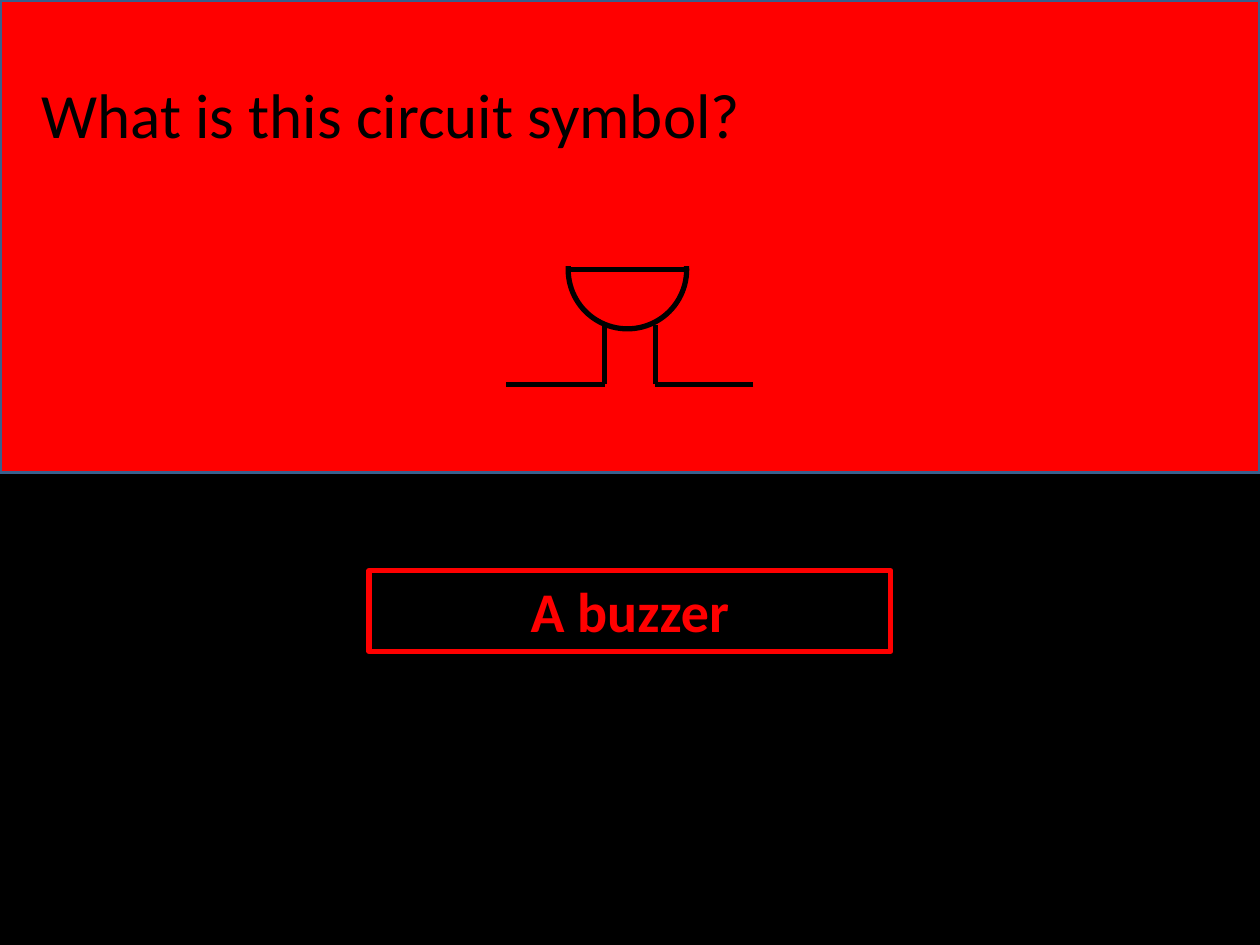
from lxml.etree import SubElement
from pptx import Presentation
from pptx.dml.color import RGBColor
from pptx.enum.shapes import MSO_CONNECTOR, MSO_SHAPE
from pptx.enum.text import MSO_ANCHOR, MSO_AUTO_SIZE, PP_ALIGN
from pptx.oxml.ns import qn
from pptx.util import Inches, Pt

COLS, ROWS = 100, 75
CELL = Inches(10) // COLS
HUES = {"black": "000000", "red": "FF0000", "edge": "3A5F8C"}


def grid(*cells):
    return [round(n * CELL) for n in cells]


def hue(name):
    return RGBColor.from_string(HUES[name])


def block(shapes, kind, box, fill=None, edge=None, width=3):
    shape = shapes.add_shape(kind, *grid(*box))
    shape.shadow.inherit = False
    if fill:
        shape.fill.solid()
        shape.fill.fore_color.rgb = hue(fill)
    else:
        shape.fill.background()
    if edge:
        shape.line.color.rgb = hue(edge)
        shape.line.width = Pt(width)
    else:
        shape.line.fill.background()
    return shape


def wire(shapes, *ends):
    line = shapes.add_connector(MSO_CONNECTOR.STRAIGHT, *grid(*ends))
    line.line.color.rgb = hue("black")
    line.line.width = Pt(3)
    SubElement(line._element.spPr, qn("a:effectLst"))


def write(shape, text, size, color, align, bold=False):
    frame = shape.text_frame
    frame.text = text
    frame.word_wrap = True
    frame.auto_size = MSO_AUTO_SIZE.SHAPE_TO_FIT_TEXT
    frame.vertical_anchor = MSO_ANCHOR.TOP
    para = frame.paragraphs[0]
    para.alignment = align
    font = para.font
    font.name, font.size, font.bold = "Calibri", Pt(size), bold
    font.color.rgb = hue(color)


def head(slide, text, box):
    title = slide.shapes.title
    title.left, title.top, title.width, title.height = grid(*box)
    write(title, text, 36, "black", PP_ALIGN.LEFT)


def buzzer(slide):
    parts = slide.shapes.add_group_shape().shapes
    mid, foot, neck = COLS / 2, 30.5, 25.8
    for side in (-1, 1):
        leg = mid + side * 2
        wire(parts, mid + side * 9.8, foot, leg, foot)
        wire(parts, leg, foot, leg, neck)
    left, top, size = 45.1, 16.7, 9.4
    rim = top + size / 2
    block(parts, MSO_SHAPE.OVAL, (left, top, size, size), edge="black")
    wire(parts, left, rim, left + size, rim)
    block(parts, MSO_SHAPE.RECTANGLE, (42.6, 15.6, 14.1, 5.5), "red")


def main():
    deck = Presentation()
    deck.slide_width, deck.slide_height = grid(COLS, ROWS)
    slide = deck.slides.add_slide(deck.slide_layouts[5])
    slide.background.fill.solid()
    slide.background.fill.fore_color.rgb = hue("black")
    shapes = slide.shapes

    band = block(shapes, MSO_SHAPE.RECTANGLE, (0, 0, COLS, ROWS / 2),
                 "red", "edge", 2)
    shapes.title._element.addprevious(band._element)
    head(slide, "What is this circuit symbol?", (2.3, 5.5, 68.8, 7.1))
    reply = block(shapes, MSO_SHAPE.RECTANGLE, (29.3, 45.3, 41.4, 6.4),
                  "black", "red")
    write(reply, "A buzzer", 32, "red", PP_ALIGN.CENTER, True)
    buzzer(slide)
    deck.save("out.pptx")


if __name__ == "__main__":
    main()
